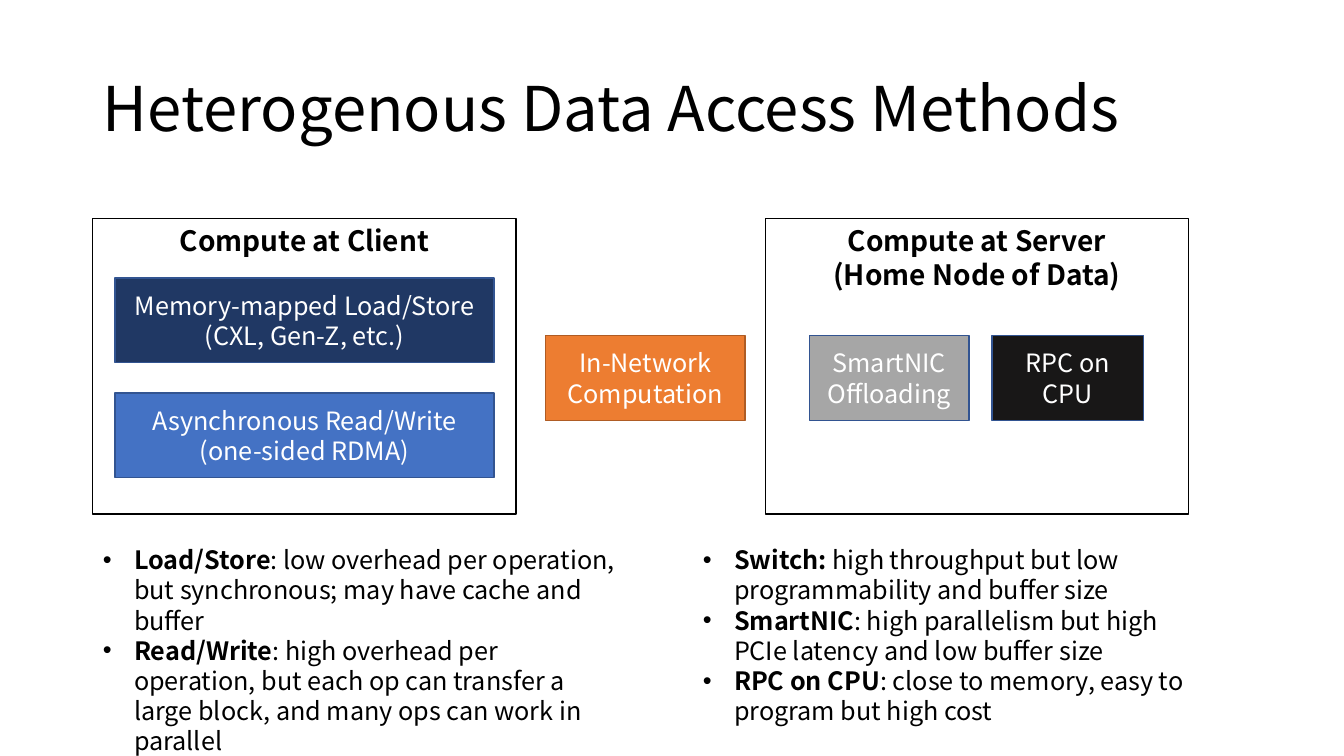
from pptx import Presentation
from pptx import util as u
from pptx.dml.color import RGBColor
from pptx.enum import shapes, text

PX = u.Inches(1) // 100  # one px is a hundredth of an inch
FACE = "Noto Sans CJK SC"

BLACK = RGBColor(0, 0, 0)
WHITE = RGBColor(255, 255, 255)
NAVY = RGBColor(0x20, 0x38, 0x64)
BLUE = RGBColor(0x44, 0x72, 0xC4)
EDGE = RGBColor(0x32, 0x54, 0x91)
GRAY = RGBColor(0xA6, 0xA6, 0xA6)
ORANGE = RGBColor(0xED, 0x7D, 0x31)
RUST = RGBColor(0xAF, 0x5C, 0x24)
COAL = RGBColor(0x18, 0x17, 0x17)

TOP, MID = text.MSO_ANCHOR.TOP, text.MSO_ANCHOR.MIDDLE
LEFT, CENTER = text.PP_ALIGN.LEFT, text.PP_ALIGN.CENTER
BOX_H = 84
INDENT = 31

# Each box: left, top, width, fill, line, words
BOXES = [
    (114, 276, 376, NAVY, EDGE, ["Memory-mapped Load/Store", "(CXL, Gen-Z, etc.)"]),
    (114, 390, 376, BLUE, EDGE, ["Asynchronous Read/Write", "(one-sided RDMA)"]),
    (541, 333, 198, ORANGE, RUST, ["In-Network Computation"]),
    (803, 333, 158, GRAY, EDGE, ["SmartNIC Offloading"]),
    (984, 333, 150, COAL, EDGE, ["RPC on CPU"]),
]
PANELS = [
    (92, ["Compute at Client"]),
    (759, ["Compute at Server", "(Home Node of Data)"]),
]
# Each point: bold lead, plain rest
CLIENT = [
    ("Load/Store", ": low overhead per operation, but synchronous; "
                   "may have cache and buffer"),
    ("Read/Write", ": high overhead per operation, but each op can transfer "
                   "a large block, and many ops can work in parallel"),
]
SERVER = [
    ("Switch: ", "high throughput but low programmability and buffer size"),
    ("SmartNIC", ": high parallelism but high PCIe latency and low buffer size"),
    ("RPC on CPU", ": close to memory, easy to program but high cost"),
]


def apply(item, form):
    for name, value in form.items():
        setattr(item, name, value)


def place(shape, *area):
    names = ("left", "top", "width", "height")
    apply(shape, {name: px * PX for name, px in zip(names, area)})


def add_run(para, words, size, color, bold=False):
    run = para.add_run()
    run.text = words
    apply(run.font, {"name": FACE, "size": u.Pt(size), "bold": bold})
    run.font.color.rgb = color


def add_rect(slide, area, fill, line, rows, size, color, bold, anchor):
    rect = slide.shapes.add_shape(
        shapes.MSO_SHAPE.RECTANGLE, *(px * PX for px in area))
    rect.shadow.inherit = False
    rect.fill.solid()
    rect.fill.fore_color.rgb = fill
    rect.line.color.rgb = line
    rect.line.width = u.Pt(1)
    frame = rect.text_frame
    apply(frame, {"word_wrap": True, "vertical_anchor": anchor})
    for i, row in enumerate(rows):
        para = frame.add_paragraph() if i else frame.paragraphs[0]
        para.alignment = CENTER
        add_run(para, row, size, color, bold)


def fill_title(holder, words):
    place(holder, 92, 38, 1150, 145)
    frame = holder.text_frame
    apply(frame, {"vertical_anchor": MID, "auto_size": text.MSO_AUTO_SIZE.NONE})
    para = frame.paragraphs[0]
    apply(para, {"alignment": LEFT, "line_spacing": 0.9})
    add_run(para, words, 44, BLACK)


def fill_list(holder, area, points):
    place(holder, *area)
    frame = holder.text_frame
    apply(frame, {"vertical_anchor": TOP, "word_wrap": True,
                  "auto_size": text.MSO_AUTO_SIZE.SHAPE_TO_FIT_TEXT})
    for i, (lead, rest) in enumerate(points):
        para = frame.add_paragraph() if i else frame.paragraphs[0]
        apply(para, {"alignment": LEFT, "space_before": u.Pt(0)})
        props = para._p.get_or_add_pPr()
        props.set("marL", str(INDENT * PX))
        props.set("indent", str(-INDENT * PX))
        add_run(para, lead, 18, BLACK, True)
        add_run(para, rest, 18, BLACK)


def main():
    deck = Presentation()
    apply(deck, {"slide_width": 1333 * PX, "slide_height": 750 * PX})
    slide = deck.slides.add_slide(deck.slide_layouts[3])
    title, left, right = slide.placeholders

    # Title
    fill_title(title, "Heterogenous Data Access Methods")

    # Client and server panels, then the methods on top
    for x, rows in PANELS:
        add_rect(slide, (x, 217, 420, 293), WHITE, BLACK, rows,
                 20, BLACK, True, TOP)
    for x, y, width, fill, line, rows in BOXES:
        add_rect(slide, (x, y, width, BOX_H), fill, line, rows,
                 18, WHITE, False, MID)

    # Trade-offs below
    fill_list(left, (92, 535, 532, 162), CLIENT)
    fill_list(right, (687, 535, 527, 192), SERVER)

    deck.save("out.pptx")


if __name__ == "__main__":
    main()
